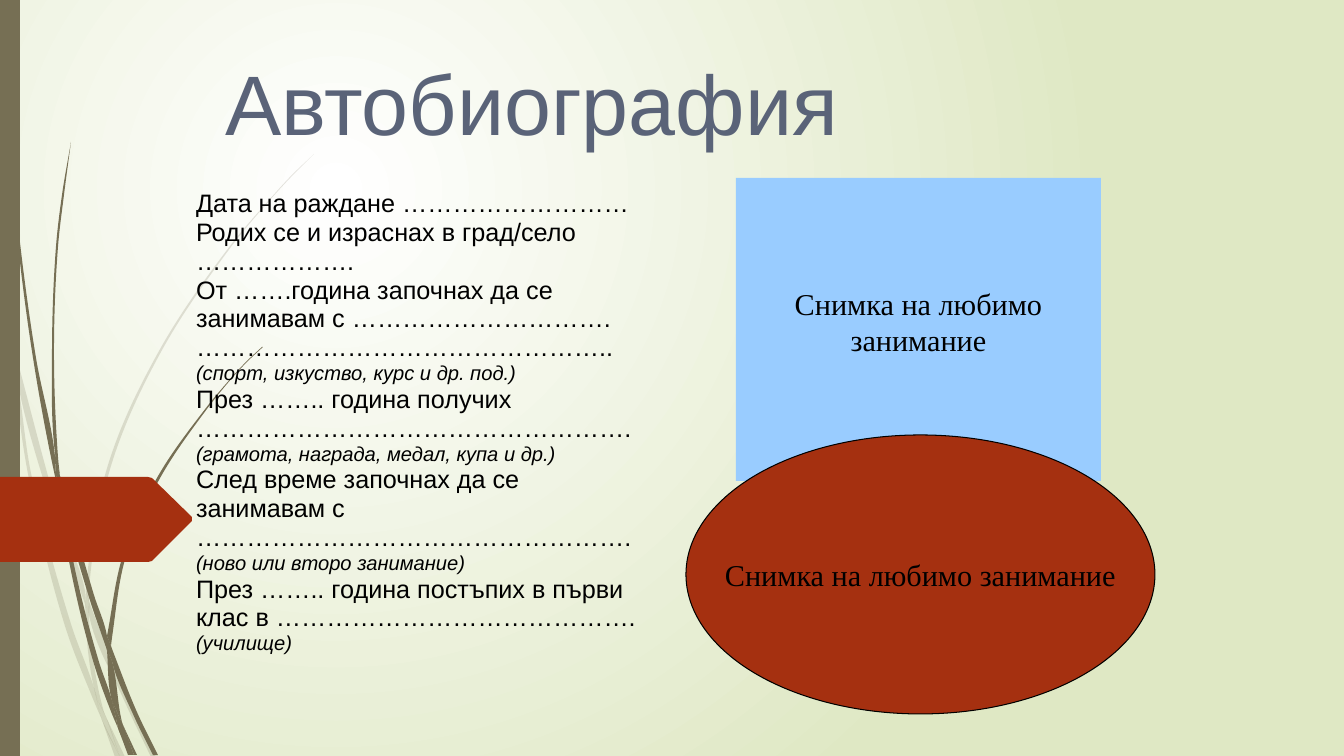
from math import hypot

from lxml import etree
from pptx import Presentation
from pptx import util as u
from pptx.dml.color import RGBColor
from pptx.enum import shapes, text
from pptx.oxml.ns import qn

# Content
TITLE = "Автобиография"
STORY = [  # (wording, is a hint)
    ("Дата на раждане ………………………", False),
    ("Родих се и израснах в град/село ……………….", False),
    ("От …….година започнах да се занимавам с ………………………….", False),
    ("…………………………………………..", False),
    ("(спорт, изкуство, курс и др. под.)", True),
    ("През …….. година получих …………………………………………….", False),
    ("(грамота, награда, медал, купа и др.)", True),
    ("След време започнах да се занимавам с …………………………………………….", False),
    ("(ново или второ занимание)", True),
    ("През …….. година постъпих в първи клас в …………………………………….", False),
    ("(училище)", True),
]
PHOTO_LABEL = "Снимка на любимо занимание"

# Colours
BLACK = RGBColor(0, 0, 0)
WHITE = RGBColor(0xFF, 0xFF, 0xFF)
PALE_GREEN = RGBColor(0xDF, 0xE8, 0xC4)
OLIVE = RGBColor(0x76, 0x6F, 0x54)
RUST = RGBColor(0xA5, 0x30, 0x10)
SKY = RGBColor(0x99, 0xCC, 0xFF)
SLATE = RGBColor(0x5A, 0x63, 0x78)

# Places in px: left, top, width, height
PX = 914400 / 100.8
SLIDE_SIZE = (1344, 756)
BAR_BOX = (0, 0, 20, 756)
TITLE_BOX = (225, 46, 885, 109)
STORY_BOX = (196, 190, 440, 494)
PHOTO_FRAMES = [  # kind, box, fill, outline, wraps, bottom margin
    (shapes.MSO_SHAPE.RECTANGLE, (736, 178, 365, 303), SKY, None, True, 21),
    (shapes.MSO_SHAPE.OVAL, (686, 435, 469, 279), RUST, BLACK, False, 5),
]
ARROW = [(0, 477), (148, 477), (152, 478), (192, 517),
         (192, 521), (152, 561), (148, 562), (0, 562)]

# Grass blades: outline points in px
FAINT_BLADES = [
    [(11, 353), (9, 325), (0, 284), (0, 301), (10, 347)],
    [(58, 526), (85, 604), (85, 591), (62, 524), (14, 348), (17, 379)],
    [(93, 612), (89, 601), (89, 615), (124, 700), (151, 757), (156, 757), (128, 698)],
    [(120, 757), (125, 757), (106, 717)],
    [(94, 688), (71, 624), (31, 473), (17, 379), (11, 353), (28, 474), (65, 626),
     (93, 699), (102, 720), (100, 713)],
    [(85, 604), (88, 651), (94, 688), (97, 698), (106, 717), (104, 712), (92, 651),
     (89, 615), (89, 613)],
    [(89, 589), (111, 466), (161, 352), (231, 247), (270, 200), (292, 176), (314, 154),
     (291, 176), (270, 199), (230, 246), (159, 351), (108, 465), (86, 589), (86, 591),
     (89, 601)],
    [(102, 720), (115, 757), (120, 757)],
    [(89, 613), (89, 615), (89, 601), (86, 591), (85, 604)],
    [(97, 698), (94, 688), (100, 713), (102, 720), (120, 757), (106, 717)],
]
DARK_BLADES = [
    [(7, 111), (17, 235), (33, 358), (56, 481), (57, 485), (55, 461), (55, 457),
     (36, 358), (19, 234), (8, 110), (5, 48), (4, 0), (3, 0), (4, 48)],
    [(89, 597), (107, 650), (107, 638), (107, 636), (94, 595), (60, 476), (65, 509)],
    [(114, 654), (111, 646), (112, 661), (133, 714), (153, 755), (158, 755), (137, 712)],
    [(111, 697), (99, 662), (73, 560), (65, 509), (57, 481), (69, 561), (94, 664),
     (112, 714), (118, 728), (117, 723)],
    [(60, 476), (58, 457), (54, 352), (58, 247), (64, 195), (71, 142), (62, 195),
     (56, 247), (52, 352), (55, 453)],
    [(134, 755), (137, 755), (123, 725)],
    [(57, 481), (65, 509), (60, 476), (55, 453), (55, 457)],
    [(112, 638), (126, 556), (159, 480), (207, 409), (233, 377), (247, 362), (263, 347),
     (262, 347), (247, 361), (233, 376), (206, 408), (157, 478), (123, 555), (107, 636),
     (111, 646)],
    [(118, 728), (128, 755), (132, 755)],
    [(107, 650), (111, 697), (117, 712), (123, 725), (122, 722), (112, 661), (110, 656)],
    [(107, 650), (110, 656), (112, 661), (111, 646), (107, 636), (107, 638)],
    [(117, 712), (111, 697), (117, 723), (118, 728), (131, 755), (134, 755), (123, 725)],
]


def emu(lengths):
    return [round(length * PX) for length in lengths]


def apply(target, values):
    for name, value in values.items():
        setattr(target, name, value)


def paint(shape, colour, outline=None):
    shape.shadow.inherit = False
    shape.fill.solid()
    shape.fill.fore_color.rgb = colour
    if outline is None:
        shape.line.fill.background()
    else:
        shape.line.color.rgb = outline
        shape.line.width = u.Pt(0.75)


def write(para, words, colour, para_format, font_format):
    apply(para, para_format)
    span = para.add_run()
    span.text = words
    apply(span.font, font_format)
    span.font.color.rgb = colour


def polygon(page, points, colour):
    corners = [emu(point) for point in points]
    builder = page.shapes.build_freeform(*corners[0], scale=1.0)
    builder.add_line_segments(corners[1:] + corners[:1], close=True)
    shape = builder.convert_to_shape()
    paint(shape, colour)
    return shape


def direction(start, end):
    dx, dy = end[0] - start[0], end[1] - start[1]
    length = hypot(dx, dy)
    return dx / length, dy / length


def handle(points, i, step):
    """Bezier handle at point i towards its neighbour; sharp corners stay sharp."""
    here, ahead = points[i], points[(i + step) % len(points)]
    behind = points[(i - step) % len(points)]
    way, arrival = direction(here, ahead), direction(behind, here)
    if way[0] * arrival[0] + way[1] * arrival[1] > 0.88:
        way = direction((0, 0), (way[0] + arrival[0], way[1] + arrival[1]))
    reach = hypot(ahead[0] - here[0], ahead[1] - here[1]) / 3
    return here[0] + way[0] * reach, here[1] + way[1] * reach


def draw_blade(page, points, alpha=None):
    blade = polygon(page, points, OLIVE)
    left, top = (min(axis) for axis in zip(*points))
    for i, line in enumerate(blade.element.findall(".//" + qn("a:lnTo"))):
        after = (i + 1) % len(points)
        curve = etree.Element(qn("a:cubicBezTo"))
        for x, y in (handle(points, i, 1), handle(points, after, -1), points[after]):
            across, down = emu((x - left, y - top))
            etree.SubElement(curve, qn("a:pt"), {"x": str(across), "y": str(down)})
        line.getparent().replace(line, curve)
    if alpha:
        tint = blade.element.spPr.find(qn("a:solidFill")).find(qn("a:srgbClr"))
        etree.SubElement(tint, qn("a:alpha"), {"val": str(alpha)})


def paint_background(page):
    fill = page.background.fill
    fill.gradient()
    for stop, colour, position in zip(fill.gradient_stops, (WHITE, PALE_GREEN), (0, 1)):
        stop.color.rgb = colour
        stop.position = position
    gradient = page.element.find(".//" + qn("a:gradFill"))
    circle = etree.Element(qn("a:path"), {"path": "circle"})
    etree.SubElement(circle, qn("a:fillToRect"),
                     {"l": "50000", "t": "50000", "r": "100000", "b": "100000"})
    gradient.replace(gradient.find(qn("a:lin")), circle)


def main():
    deck = Presentation()
    deck.slide_width, deck.slide_height = emu(SLIDE_SIZE)
    page = deck.slides.add_slide(deck.slide_layouts[0])
    paint_background(page)

    # Grass, side bar and arrow
    for blades, alpha in ((FAINT_BLADES, 20000), (DARK_BLADES, None)):
        for points in blades:
            draw_blade(page, points, alpha)
    paint(page.shapes.add_shape(shapes.MSO_SHAPE.RECTANGLE, *emu(BAR_BOX)), OLIVE)
    polygon(page, ARROW, RUST)

    # Title and story, in front of the grass
    title, story = page.placeholders
    frame_format = {"margin_left": 0, "margin_top": 0, "margin_right": 0,
                    "margin_bottom": 0, "word_wrap": True,
                    "auto_size": text.MSO_AUTO_SIZE.NONE}
    for holder, box, anchor in ((title, TITLE_BOX, text.MSO_ANCHOR.BOTTOM),
                                (story, STORY_BOX, text.MSO_ANCHOR.TOP)):
        apply(holder, dict(zip(("left", "top", "width", "height"), emu(box))))
        apply(holder.text_frame, {**frame_format, "vertical_anchor": anchor})
        holder.element.getparent().append(holder.element)
    left_format = {"alignment": text.PP_ALIGN.LEFT, "line_spacing": 0.95,
                   "space_before": u.Pt(0)}
    write(title.text_frame.paragraphs[0], TITLE, SLATE, left_format,
          {"name": "Arial", "size": u.Pt(60.3)})
    frame = story.text_frame
    for i, (words, hint) in enumerate(STORY):
        para = frame.add_paragraph() if i else frame.paragraphs[0]
        write(para, words, BLACK, left_format,
              {"name": "Arial", "size": u.Pt(14.4 if hint else 18), "italic": hint})

    # Photo frames
    for kind, box, colour, outline, wraps, margin in PHOTO_FRAMES:
        photo = page.shapes.add_shape(kind, *emu(box))
        paint(photo, colour, outline)
        apply(photo.text_frame, {"word_wrap": wraps, "margin_bottom": emu([margin])[0],
                                 "vertical_anchor": text.MSO_ANCHOR.MIDDLE})
        write(photo.text_frame.paragraphs[0], PHOTO_LABEL, BLACK,
              {"alignment": text.PP_ALIGN.CENTER},
              {"name": "Times New Roman", "size": u.Pt(21.6)})

    deck.save("out.pptx")


if __name__ == "__main__":
    main()
